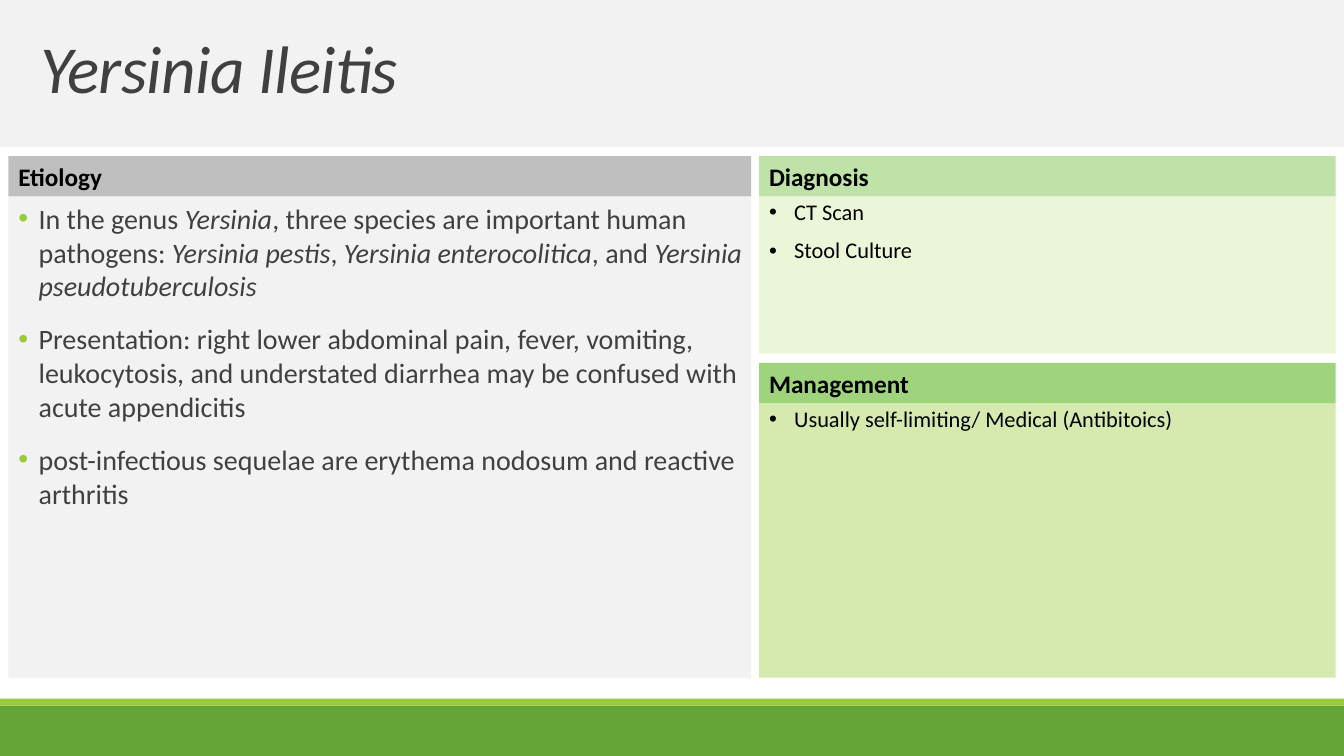
from pptx import Presentation
from pptx.dml.color import RGBColor
from pptx.enum.shapes import MSO_SHAPE as SHAPE
from pptx.enum.text import MSO_ANCHOR as ANCHOR, MSO_AUTO_SIZE as AUTO_SIZE, PP_ALIGN as ALIGN
from pptx.oxml.ns import qn
from pptx.util import Pt
from lxml.etree import SubElement

GREEN = RGBColor(0x63, 0xA5, 0x37)
LIME = RGBColor(0x99, 0xCB, 0x38)
PALE_GRAY = RGBColor(0xF2, 0xF2, 0xF2)
MID_GRAY = RGBColor(0xBF, 0xBF, 0xBF)
DARK_GRAY = RGBColor(0x40, 0x40, 0x40)
BLACK = RGBColor(0, 0, 0)
DIAGNOSIS_HEAD = RGBColor(0xBF, 0xE2, 0xA8)
DIAGNOSIS_BODY = RGBColor(0xEB, 0xF5, 0xD7)
MANAGEMENT_HEAD = RGBColor(0x9F, 0xD4, 0x7D)
MANAGEMENT_BODY = RGBColor(0xD6, 0xEA, 0xAF)

SLIDE_WIDTH, SLIDE_HEIGHT = 960, 540
HEAD_HEIGHT = 28.8
LEFT, LEFT_WIDTH = 6, 530.6
RIGHT, RIGHT_WIDTH = 542.2, 411.8
TOP_ROW, LOWER_ROW = 111.6, 259.2

presentation = Presentation()
presentation.slide_width = Pt(SLIDE_WIDTH)
presentation.slide_height = Pt(SLIDE_HEIGHT)
slide = presentation.slides.add_slide(presentation.slide_layouts[5])


def add_block(left, top, width, height, color):
    shape = slide.shapes.add_shape(SHAPE.RECTANGLE, Pt(left), Pt(top), Pt(width), Pt(height))
    shape.shadow.inherit = False
    shape.fill.solid()
    shape.fill.fore_color.rgb = color
    shape.line.fill.background()
    shape.text_frame.word_wrap = True
    shape.text_frame.vertical_anchor = ANCHOR.TOP
    return shape


def add_bullet(paragraph, margin, hanging, color):
    paragraph.alignment = ALIGN.LEFT
    properties = paragraph._p.get_or_add_pPr()
    properties.set("marL", str(Pt(margin)))
    properties.set("indent", str(-Pt(hanging)))
    bullet_color = SubElement(properties, qn("a:buClr"))
    SubElement(bullet_color, qn("a:srgbClr"), val=str(color))
    SubElement(properties, qn("a:buFont"), typeface="Arial")
    SubElement(properties, qn("a:buChar"), char="•")


add_block(0, 504, SLIDE_WIDTH, 36, GREEN)
add_block(0, 499, SLIDE_WIDTH, 5, LIME)

title = slide.shapes.title
title.left, title.top, title.width, title.height = Pt(0), Pt(-0.7), Pt(SLIDE_WIDTH), Pt(105.8)
title.fill.solid()
title.fill.fore_color.rgb = PALE_GRAY
title.text_frame.text = "Yersinia Ileitis"
title.text_frame.auto_size = AUTO_SIZE.NONE
title.text_frame.vertical_anchor = ANCHOR.MIDDLE
paragraph = title.text_frame.paragraphs[0]
paragraph.alignment = ALIGN.LEFT
paragraph.line_spacing = 0.85
paragraph._p.get_or_add_pPr().set("indent", str(Pt(21.6)))
run = paragraph.runs[0]
run.font.name = "Calibri"
run.font.size = Pt(48)
run.font.italic = True
run.font.color.rgb = DARK_GRAY
run.font._element.set("spc", "-50")

etiology_points = [
    ["In the genus ", "Yersinia", ", three species are important human pathogens: ",
     "Yersinia pestis", ", ", "Yersinia enterocolitica", ", and ",
     "Yersinia pseudotuberculosis"],
    ["Presentation: right lower abdominal pain, fever, vomiting, leukocytosis, and "
     "understated diarrhea may be confused with acute appendicitis"],
    ["post-infectious sequelae are erythema nodosum and reactive arthritis"],
]
etiology = add_block(LEFT, TOP_ROW + HEAD_HEIGHT, LEFT_WIDTH, 344, PALE_GRAY)
frame = etiology.text_frame
frame.margin_left = frame.margin_right = Pt(0)
for number, pieces in enumerate(etiology_points):
    paragraph = frame.add_paragraph() if number else frame.paragraphs[0]
    paragraph.space_before = Pt(12 if number else 0)
    paragraph.space_after = Pt(2)
    add_bullet(paragraph, 21.6, 14.4, LIME)
    for position, piece in enumerate(pieces):
        run = paragraph.add_run()
        run.text = piece
        run.font.name = "Calibri"
        run.font.size = Pt(20)
        run.font.italic = position % 2 == 1
        run.font.color.rgb = DARK_GRAY

right_panels = [
    (TOP_ROW, 112.3, DIAGNOSIS_BODY, ["CT Scan", "Stool Culture"]),
    (LOWER_ROW, 196, MANAGEMENT_BODY, ["Usually self-limiting/ Medical (Antibitoics)"]),
]
for top, height, color, points in right_panels:
    panel = add_block(RIGHT, top + HEAD_HEIGHT, RIGHT_WIDTH, height, color)
    panel.text_frame.text = "\n".join(points)
    for number, paragraph in enumerate(panel.text_frame.paragraphs):
        paragraph.line_spacing = 0.9
        paragraph.space_before = Pt(10 if number else 0)
        add_bullet(paragraph, 18, 18, BLACK)
        font = paragraph.runs[0].font
        font.name = "Calibri"
        font.size = Pt(16)
        font.color.rgb = BLACK

headings = [
    ("Etiology", LEFT, TOP_ROW, LEFT_WIDTH, MID_GRAY),
    ("Diagnosis", RIGHT, TOP_ROW, RIGHT_WIDTH, DIAGNOSIS_HEAD),
    ("Management", RIGHT, LOWER_ROW, RIGHT_WIDTH, MANAGEMENT_HEAD),
]
for text, left, top, width, color in headings:
    heading = add_block(left, top, width, HEAD_HEIGHT, color)
    heading.text_frame.text = text
    paragraph = heading.text_frame.paragraphs[0]
    paragraph.alignment = ALIGN.LEFT
    font = paragraph.runs[0].font
    font.name = "Calibri"
    font.size = Pt(18)
    font.bold = True
    font.color.rgb = BLACK

presentation.save("out.pptx")
